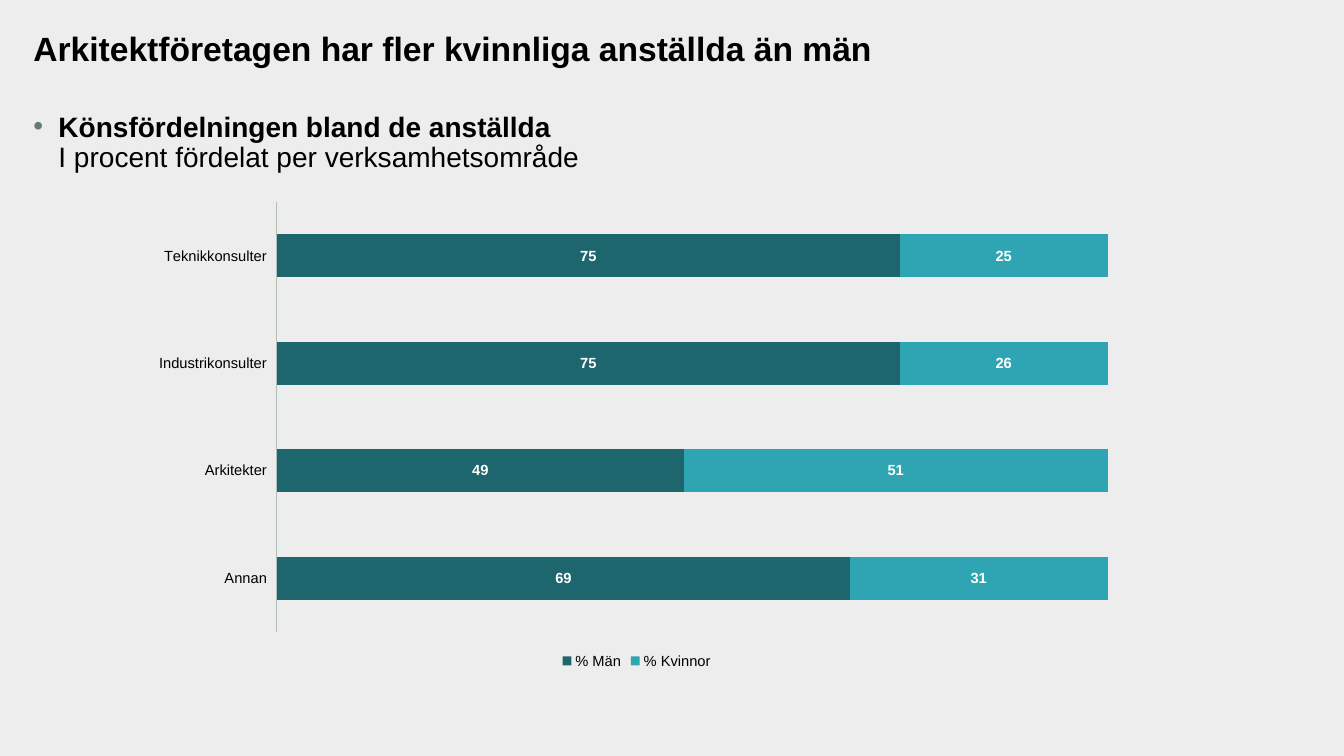
"""Build a slide on the gender split of employees in consulting firms."""
from lxml.etree import SubElement
from pptx import Presentation
from pptx.chart.data import CategoryChartData
from pptx.dml.color import RGBColor
from pptx.enum.chart import XL_CHART_TYPE, XL_LABEL_POSITION, XL_LEGEND_POSITION, XL_TICK_LABEL_POSITION, XL_TICK_MARK
from pptx.oxml import parse_xml
from pptx.oxml.ns import nsdecls, qn
from pptx.util import Inches, Pt

THEME = {
    "background": RGBColor.from_string("EDEDED"),
    "text": RGBColor.from_string("000000"),
    "label": RGBColor.from_string("FFFFFF"),
    "axis": RGBColor.from_string("B0BFB7"),
    "bullet": "657B71",
    "series": [RGBColor.from_string("1D666E"), RGBColor.from_string("2FA5B3")],
    "font": "Arial",
    "title_size": Pt(24),
    "body_size": Pt(20),
    "chart_size": Pt(10.5),
}


def style_font(font, size, color="text", bold=False):
    for attribute, value in {"name": THEME["font"], "size": size, "bold": bold}.items():
        setattr(font, attribute, value)
    font.color.rgb = THEME[color]


def add_heading(slide, top):
    box = slide.shapes.add_textbox(Inches(0.33), Inches(top), Inches(12.68), Inches(0.56))
    frame = box.text_frame
    frame_format = {"word_wrap": True, "margin_left": 0, "margin_right": 0, "margin_top": 0, "margin_bottom": 0}
    for attribute, value in frame_format.items():
        setattr(frame, attribute, value)
    paragraph = frame.paragraphs[0]
    paragraph.line_spacing = 0.9
    return paragraph


prs = Presentation()
prs.slide_width, prs.slide_height = Inches(13.33), Inches(7.5)
slide = prs.slides.add_slide(prs.slide_layouts[6])
slide.background.fill.solid()
slide.background.fill.fore_color.rgb = THEME["background"]

title = add_heading(slide, 0.32)
title.text = "Arkitektföretagen har fler kvinnliga anställda än män"
style_font(title.font, THEME["title_size"], bold=True)

subtitle = add_heading(slide, 1.12)
indents = subtitle._p.get_or_add_pPr()
indents.set("marL", str(Inches(0.25)))
indents.set("indent", str(-Inches(0.25)))
bullet_color = SubElement(indents, qn("a:buClr"))
SubElement(bullet_color, qn("a:srgbClr"), val=THEME["bullet"])
SubElement(indents, qn("a:buFont"), typeface=THEME["font"])
SubElement(indents, qn("a:buChar"), char="•")
style_font(subtitle.font, THEME["body_size"])
heading = subtitle.add_run()
heading.text = "Könsfördelningen bland de anställda"
style_font(heading.font, THEME["body_size"], bold=True)
subtitle.add_line_break()
explanation = subtitle.add_run()
explanation.text = "I procent fördelat per verksamhetsområde"
style_font(explanation.font, THEME["body_size"])

gender_split = CategoryChartData(number_format="0")
gender_split.categories = ["Teknikkonsulter", "Industrikonsulter", "Arkitekter", "Annan"]
gender_split.add_series("% Män", [75, 75, 49, 69])
gender_split.add_series("% Kvinnor", [25, 26, 51, 31])
chart = slide.shapes.add_chart(
    XL_CHART_TYPE.BAR_STACKED, Inches(1.44), Inches(1.91), Inches(9.75), Inches(4.77), gender_split
).chart
style_font(chart.font, THEME["chart_size"])
chart.has_title = False
chart.has_legend = True
legend_format = {"position": XL_LEGEND_POSITION.BOTTOM, "include_in_layout": False}
for attribute, value in legend_format.items():
    setattr(chart.legend, attribute, value)
style_font(chart.legend.font, THEME["chart_size"])

category_format = {
    "reverse_order": True,
    "has_major_gridlines": False,
    "major_tick_mark": XL_TICK_MARK.NONE,
    "minor_tick_mark": XL_TICK_MARK.NONE,
    "tick_label_position": XL_TICK_LABEL_POSITION.LOW,
}
value_format = {"visible": False, "has_major_gridlines": False, "minimum_scale": 0, "maximum_scale": 100}
for axis, axis_format in [(chart.category_axis, category_format), (chart.value_axis, value_format)]:
    for attribute, value in axis_format.items():
        setattr(axis, attribute, value)
category_axis = chart.category_axis
category_axis.format.line.color.rgb = THEME["axis"]
category_axis.format.line.width = Pt(0.75)
style_font(category_axis.tick_labels.font, THEME["chart_size"])

bars = chart.plots[0]
for attribute, value in {"gap_width": 150, "overlap": 100, "vary_by_categories": False}.items():
    setattr(bars, attribute, value)
label_format = {
    "show_value": True,
    "position": XL_LABEL_POSITION.CENTER,
    "number_format": "0",
    "number_format_is_linked": False,
}
for gender, color in zip(bars.series, THEME["series"]):
    gender.format.fill.solid()
    gender.format.fill.fore_color.rgb = color
    for attribute, value in label_format.items():
        setattr(gender.data_labels, attribute, value)
    style_font(gender.data_labels.font, THEME["chart_size"], "label", True)

plot_area = chart.element.xpath(".//c:plotArea")[0]
for default_layout in plot_area.findall(qn("c:layout")):
    plot_area.remove(default_layout)
layout = parse_xml(f"<c:layout {nsdecls('c')}/>")
manual = SubElement(layout, qn("c:manualLayout"))
plot_layout = {"layoutTarget": "inner", "xMode": "edge", "yMode": "edge", "x": 0.134, "y": 0.02, "w": 0.845, "h": 0.894}
for tag, value in plot_layout.items():
    SubElement(manual, qn(f"c:{tag}"), val=str(value))
plot_area.insert(0, layout)

prs.save("out.pptx")
